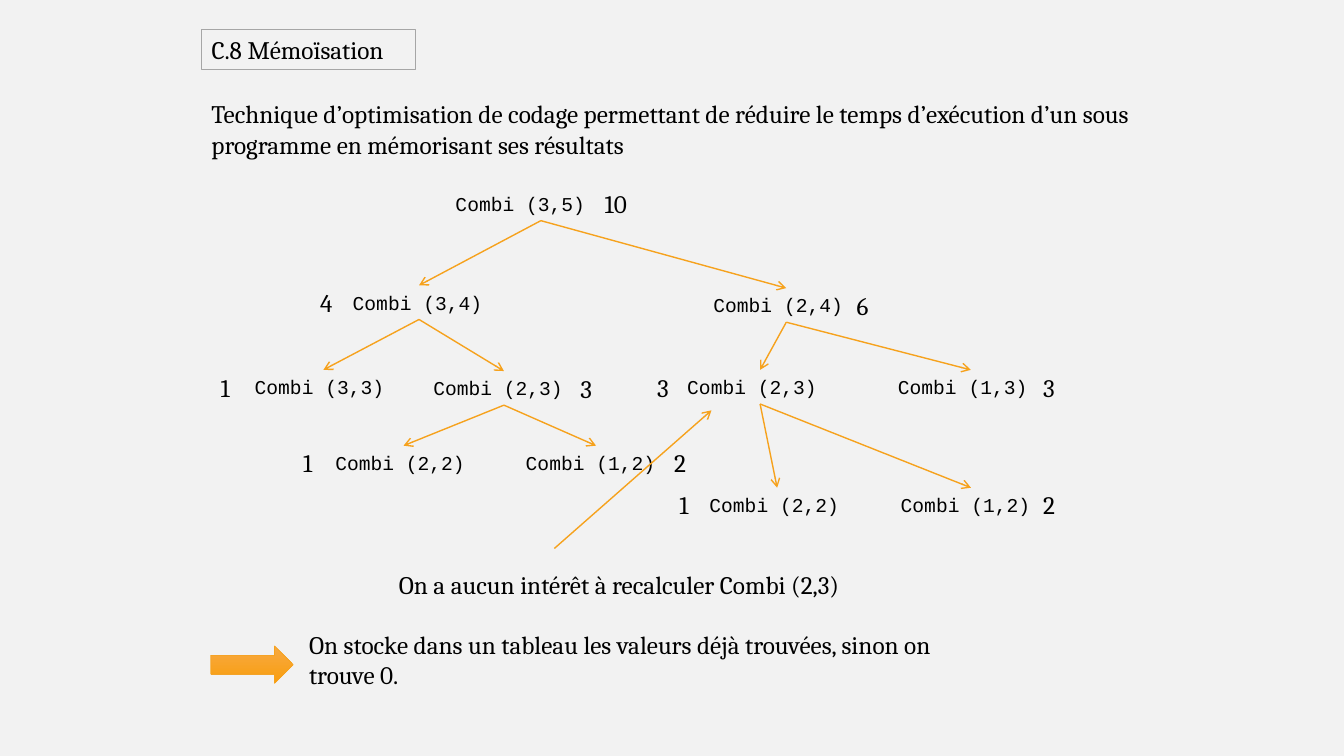
"""Build the slide on memoisation with the call tree of Combi (3,5)."""
import pptx
import pptx.dml.color
import pptx.enum.dml
import pptx.enum.shapes
import pptx.enum.text
import pptx.oxml
import pptx.oxml.ns
import pptx.util

Cm, Pt = pptx.util.Cm, pptx.util.Pt

TITLE = ("C.8 Mémoïsation", 5.08, 0.74, 5.38, 1.02)
PARAGRAPHS = [
    ("Technique d’optimisation de codage permettant de réduire le temps d’exécution "
     "d’un sous programme en mémorisant ses résultats", 5.08, 2.36, 23.72, 1.8),
    ("On a aucun intérêt à recalculer Combi (2,3)", 9.8, 14.22, 14.02, 1.02),
    ("On stocke dans un tableau les valeurs déjà trouvées, sinon on trouve 0.",
     7.54, 15.72, 16.92, 1.8),
]
# key: arguments, left, top, width, result, result left, parent
CALLS = {
    "root": ("3,5", 11.23, 4.7, 4.8, "10", 14.99, None),
    "left": ("3,4", 8.64, 7.19, 3.84, "4", 7.82, "root"),
    "right": ("2,4", 17.73, 7.26, 4.17, "6", 21.34, "root"),
    "left leaf": ("3,3", 6.17, 9.32, 3.96, "1", 5.31, "left"),
    "first 2,3": ("2,3", 10.67, 9.35, 4.06, "3", 14.38, "left"),
    "first 2,2": ("2,2", 8.2, 11.23, 3.94, "1", 7.39, "first 2,3"),
    "first 1,2": ("1,2", 13, 11.23, 4.04, "2", 16.74, "first 2,3"),
    "second 2,3": ("2,3", 17.07, 9.32, 4.17, "3", 16.31, "right"),
    "right leaf": ("1,3", 22.38, 9.32, 4.17, "3", 26.04, "right"),
    "second 2,2": ("2,2", 17.63, 12.29, 3.91, "1", 16.87, "second 2,3"),
    "second 1,2": ("1,2", 22.45, 12.29, 4.04, "2", 26.04, "second 2,3"),
}
CALL_HEIGHT = 0.86
RESULT_SIZE = (1.63, 1.03)
RESULT_RISE = 0.08
REMARK_ARROW = (13.97, 13.82, 17.93, 10.34)
CONCLUSION_ARROW = (5.31, 16.28, 2.08, 0.94)

COLORS = {"background": "F2F2F2", "text": "000000", "frame": "A6A6A6",
          "arrow": "F6A21D", "arrow top": "F7A942", "arrow bottom": "F99E0F"}
PROSE = {"name": "Cambria", "size": Pt(18), "bold": False}
CODE = {"name": "Courier New", "size": Pt(14), "bold": False}
FRAME = {"word_wrap": True, "auto_size": pptx.enum.text.MSO_AUTO_SIZE.NONE,
         "margin_left": Cm(0.25), "margin_right": Cm(0.25),
         "margin_top": Cm(0.13), "margin_bottom": Cm(0.13)}


def rgb(role):
    return pptx.dml.color.RGBColor.from_string(COLORS[role])


def apply(target, values):
    for attribute, value in values.items():
        setattr(target, attribute, value)


def write(holder, text, font, anchor="TOP"):
    frame = holder.text_frame
    apply(frame, FRAME)
    frame.vertical_anchor = getattr(pptx.enum.text.MSO_ANCHOR, anchor)
    paragraph = frame.paragraphs[0]
    paragraph.alignment = pptx.enum.text.PP_ALIGN.LEFT
    run = paragraph.add_run()
    run.text = text
    apply(run.font, font)
    run.font.color.rgb = rgb("text")


def add_text(slide, text, left, top, width, height, font):
    write(slide.shapes.add_textbox(Cm(left), Cm(top), Cm(width), Cm(height)), text, font)


def add_arrow(slide, *ends):
    arrow = slide.shapes.add_connector(
        pptx.enum.shapes.MSO_CONNECTOR.STRAIGHT, *map(Cm, ends))
    arrow.line.color.rgb = rgb("arrow")
    arrow.line.width = Pt(1)
    head = pptx.oxml.parse_xml(
        f'<a:tailEnd {pptx.oxml.ns.nsdecls("a")} type="arrow"/>')
    arrow.line._get_or_add_ln().append(head)
    arrow._element.spPr.append(
        pptx.oxml.parse_xml(f'<a:effectLst {pptx.oxml.ns.nsdecls("a")}/>'))


def add_title(slide):
    text, *box = TITLE
    heading = slide.shapes.title
    apply(heading, dict(zip(("left", "top", "width", "height"), map(Cm, box))))
    write(heading, text, PROSE, "MIDDLE")
    heading.line.color.rgb = rgb("frame")
    heading.line.width = Pt(0.75)


def add_tree(slide):
    for arguments, left, top, width, result, result_left, parent in CALLS.values():
        add_text(slide, f"Combi ({arguments})", left, top, width, CALL_HEIGHT, CODE)
        add_text(slide, result, result_left, top - RESULT_RISE, *RESULT_SIZE, PROSE)
        if parent:
            _, parent_left, parent_top, parent_width, *_ = CALLS[parent]
            add_arrow(slide, parent_left + parent_width / 2, parent_top + CALL_HEIGHT,
                      left + width / 2, top)


def add_conclusion_arrow(slide):
    arrow = slide.shapes.add_shape(
        pptx.enum.shapes.MSO_SHAPE.RIGHT_ARROW, *map(Cm, CONCLUSION_ARROW))
    arrow.shadow.inherit = False
    arrow.fill.gradient()
    arrow.fill.gradient_angle = 270
    for stop, role in zip(arrow.fill.gradient_stops, ("arrow top", "arrow bottom")):
        stop.color.rgb = rgb(role)
    arrow.line.color.rgb = rgb("arrow")
    arrow.line.width = Pt(0.5)


def main():
    deck = pptx.Presentation()
    apply(deck, {"slide_width": Cm(33.87), "slide_height": Cm(19.05)})
    slide = deck.slides.add_slide(deck.slide_layouts.get_by_name("Title Only"))
    slide.background.fill.solid()
    slide.background.fill.fore_color.rgb = rgb("background")
    add_title(slide)
    for text, *box in PARAGRAPHS:
        add_text(slide, text, *box, PROSE)
    add_tree(slide)
    add_arrow(slide, *REMARK_ARROW)
    add_conclusion_arrow(slide)
    deck.save("out.pptx")


if __name__ == "__main__":
    main()
